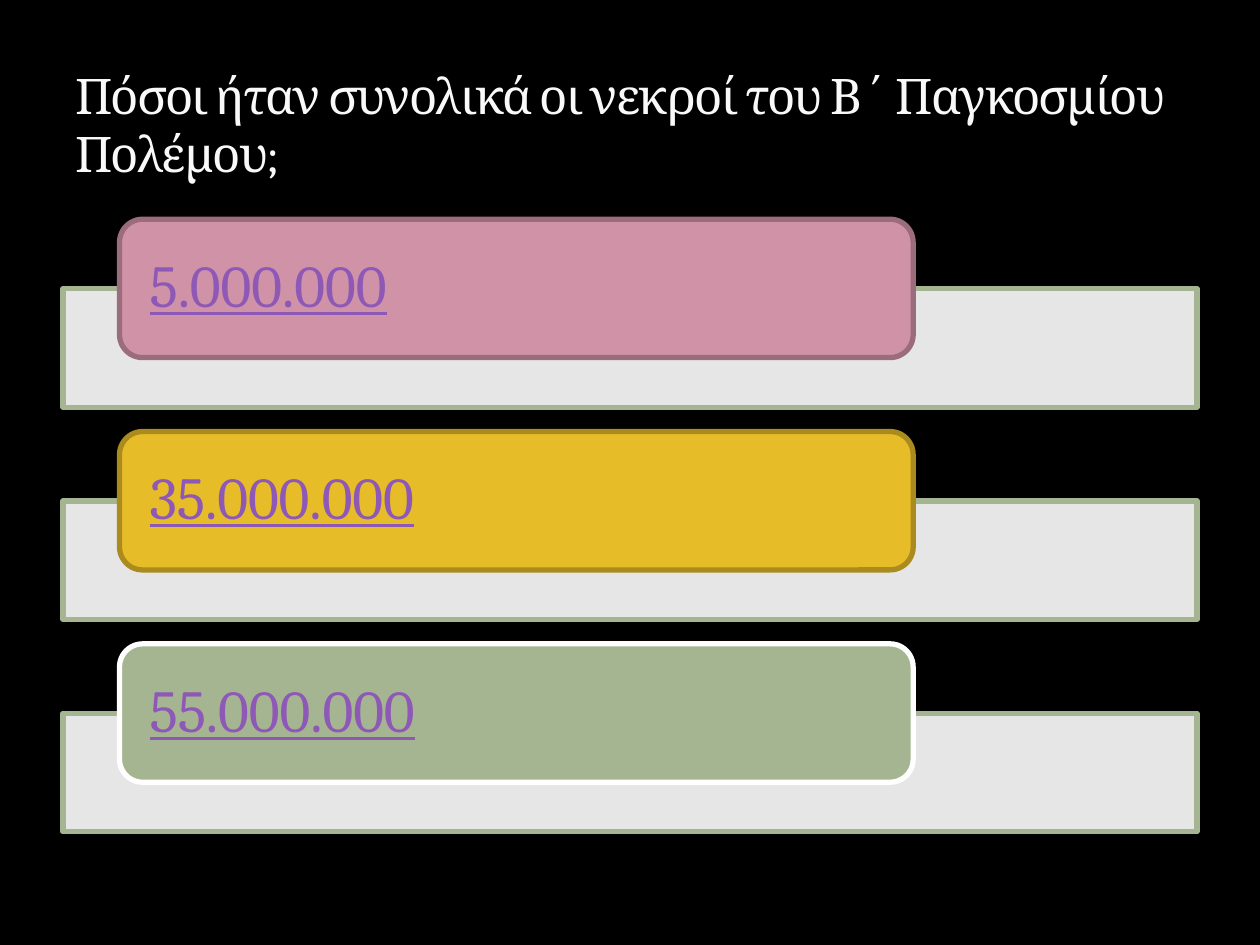
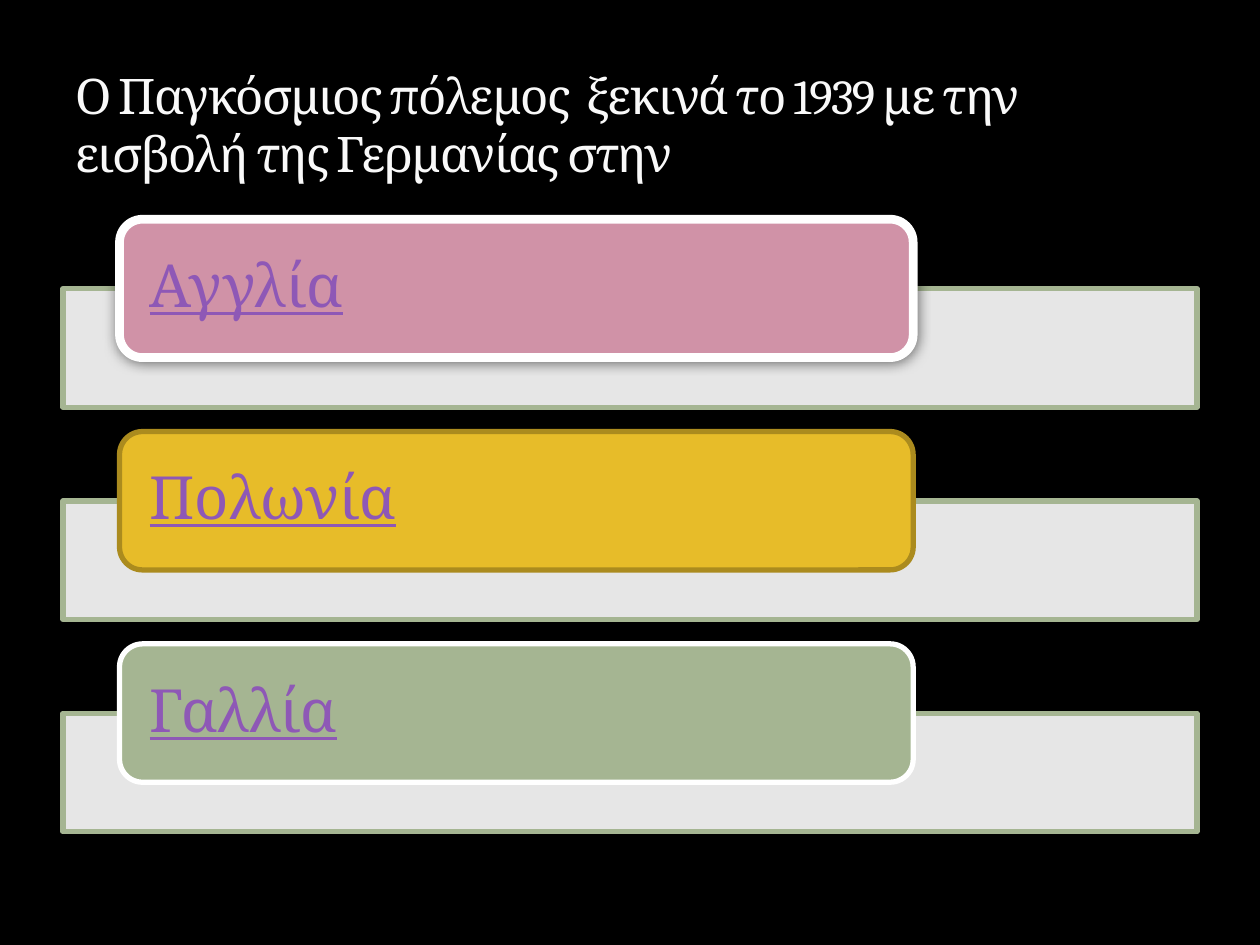
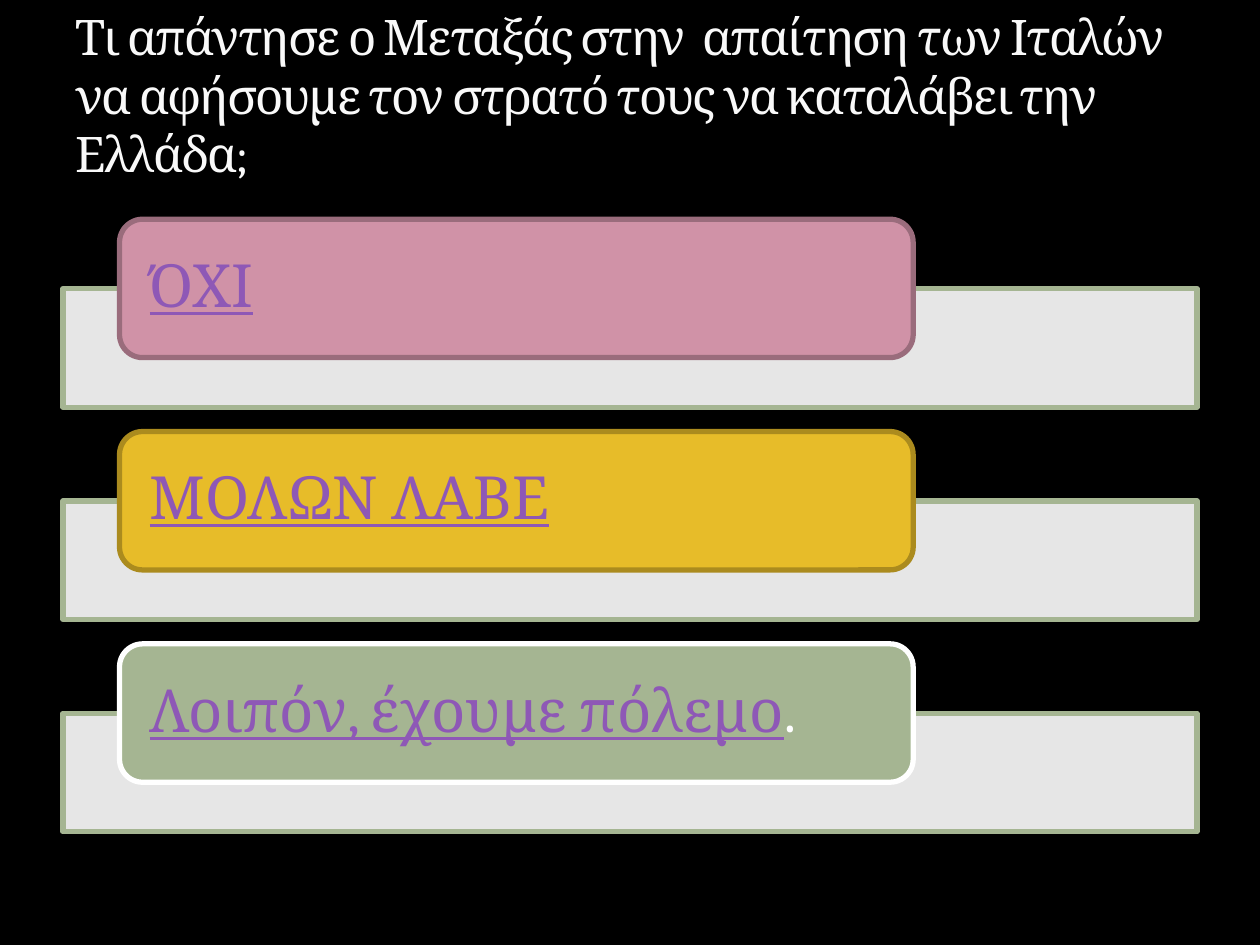
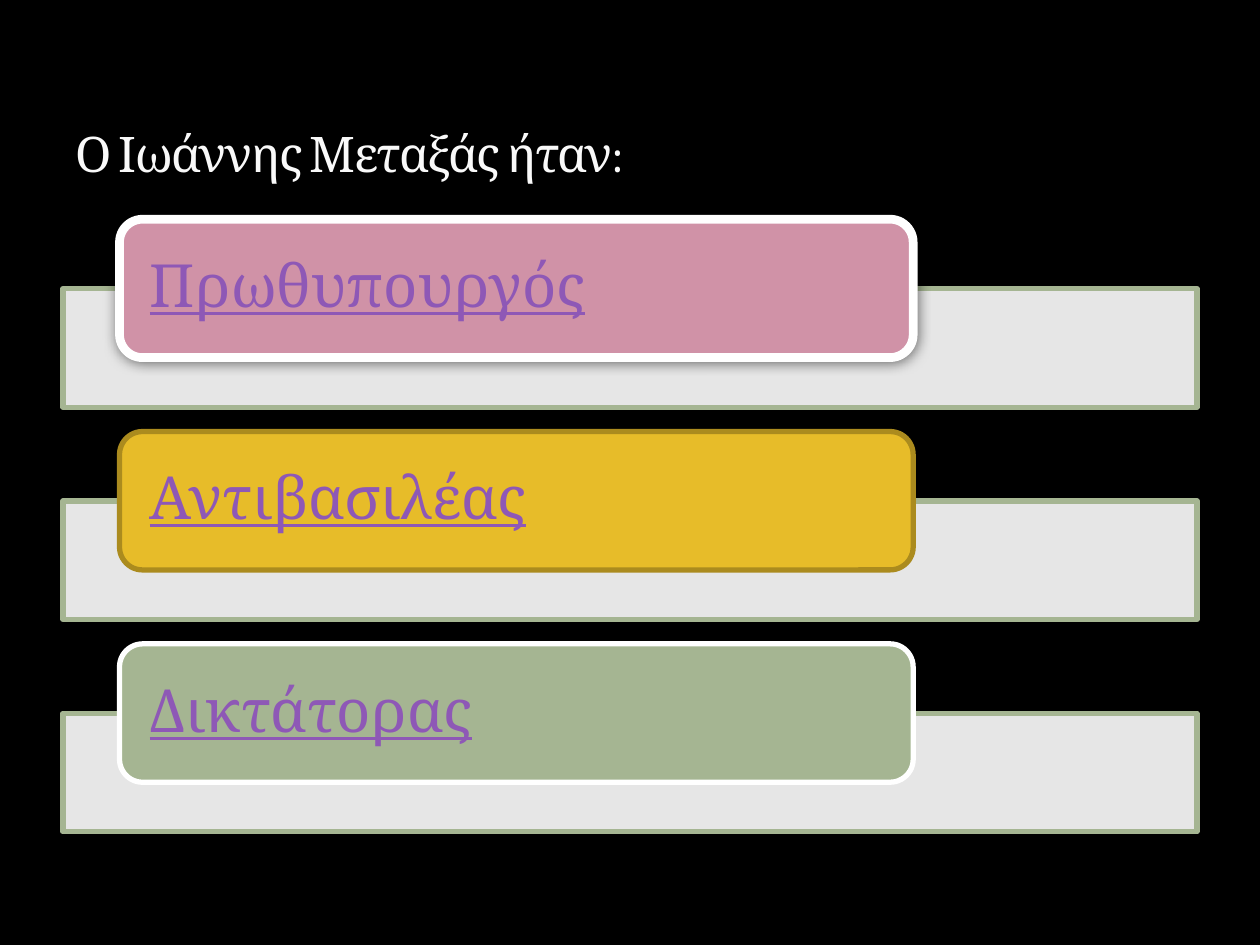
import pptx
import pptx.util
import pptx.dml.color
import pptx.enum.shapes
import pptx.enum.text
import pptx.oxml
import pptx.oxml.ns
from lxml import etree

Cm, Pt = pptx.util.Cm, pptx.util.Pt
SHAPE = pptx.enum.shapes.MSO_SHAPE
ANCHOR = pptx.enum.text.MSO_ANCHOR
qn = pptx.oxml.ns.qn

# Shared style
FONT = "Cambria"
BLACK, WHITE = "000000", "FFFFFF"
TITLE_COLOR, LINK = "F9F9F9", "8E58B6"
BAR_LINE = "A5B592"
TAB_STYLES = [("D092A7", "9A6C7C"), ("E7BC29", "AB8B1E"), ("A5B592", WHITE)]

# Answer rows, in cm
BAR_TOP, TAB_TOP, PITCH = 5.82, 4.42, 4.28

# Question, three answers, whether the first answer is highlighted
QUIZ = [
    ("Πόσοι ήταν συνολικά οι νεκροί του Β΄ Παγκοσμίου Πολέμου;",
     ["5.000.000", "35.000.000", "55.000.000"], False),
    ("Ο Παγκόσμιος πόλεμος  ξεκινά το 1939 με την εισβολή της Γερμανίας στην",
     ["Αγγλία", "Πολωνία", "Γαλλία"], True),
    ("Τι απάντησε ο Μεταξάς στην  απαίτηση των Ιταλών να αφήσουμε τον στρατό "
     "τους να καταλάβει την Ελλάδα;",
     ["ΌΧΙ", "ΜΟΛΩΝ ΛΑΒΕ", "Λοιπόν, έχουμε πόλεμο."], False),
    ("Ο Ιωάννης Μεταξάς ήταν:",
     ["Πρωθυπουργός", "Αντιβασιλέας", "Δικτάτορας"], True),
]


def rgb(color):
    return pptx.dml.color.RGBColor.from_string(color)


def add_run(p, text, size, color, underline=False):
    r = p.add_run()
    r.text = text
    r.font.name = FONT
    r.font.size = Pt(size)
    r.font.color.rgb = rgb(color)
    r.font.underline = underline
    return r


def add_box(s, kind, left, top, width, height, fill, line, line_width=3):
    sp = s.shapes.add_shape(kind, Cm(left), Cm(top), Cm(width), Cm(height))
    sp.shadow.inherit = False
    sp.fill.solid()
    sp.fill.fore_color.rgb = rgb(fill)
    sp.line.color.rgb = rgb(line)
    sp.line.width = Pt(line_width)
    return sp


def set_alpha(clr, percent):
    etree.SubElement(clr, qn("a:alpha")).set("val", str(percent * 1000))


def add_glow_shadow(sp):
    effects = sp._element.spPr.find(qn("a:effectLst"))
    shadow = etree.SubElement(effects, qn("a:outerShdw"), blurRad=str(Pt(7.5)),
                              dist="0", dir="0", rotWithShape="0")
    clr = etree.SubElement(shadow, qn("a:srgbClr"), val=BLACK)
    set_alpha(clr, 50)


def add_title(s, text):
    sp = s.shapes.add_textbox(Cm(1.27), Cm(0.74), Cm(22.86), Cm(3.07))
    tf = sp.text_frame
    tf.word_wrap = True
    tf.vertical_anchor = ANCHOR.BOTTOM
    r = add_run(tf.paragraphs[0], text, 28, TITLE_COLOR)
    r.font._element.set("spc", "-100")


def add_bar(s, row):
    sp = add_box(s, SHAPE.RECTANGLE, 1.27, BAR_TOP + row * PITCH, 22.86, 2.39,
                 WHITE, BAR_LINE)
    set_alpha(sp._element.spPr.find(qn("a:solidFill"))[0], 90)


def add_answer(s, row, text, highlighted):
    fill, line = TAB_STYLES[row]
    if highlighted:
        line = WHITE
    sp = add_box(s, SHAPE.ROUNDED_RECTANGLE, 2.41, TAB_TOP + row * PITCH, 16, 2.79,
                 fill, line, 5 if highlighted else 3)
    if highlighted:
        add_glow_shadow(sp)
    tf = sp.text_frame
    tf.word_wrap = True
    tf.vertical_anchor = ANCHOR.MIDDLE
    tf.margin_left = tf.margin_right = Cm(0.47)
    tf.margin_top = tf.margin_bottom = 0
    p = tf.paragraphs[0]
    p.alignment = pptx.enum.text.PP_ALIGN.LEFT
    p.line_spacing = 0.9
    # A closing full stop stays outside the underlined part
    words = text.rstrip(".")
    add_run(p, words, 34, LINK, underline=True)
    if words != text:
        add_run(p, ".", 34, WHITE)


def add_question_slide(prs, question, answers, first_highlighted):
    s = prs.slides.add_slide(prs.slide_layouts[6])
    s.background.fill.solid()
    s.background.fill.fore_color.rgb = rgb(BLACK)
    for row, answer in enumerate(answers):
        add_bar(s, row)
        add_answer(s, row, answer, first_highlighted and row == 0)
    add_title(s, question)


def main():
    prs = pptx.Presentation()
    prs.slide_width, prs.slide_height = Cm(25.4), Cm(19.05)
    for question, answers, first_highlighted in QUIZ:
        add_question_slide(prs, question, answers, first_highlighted)
    prs.save("out.pptx")


if __name__ == "__main__":
    main()
